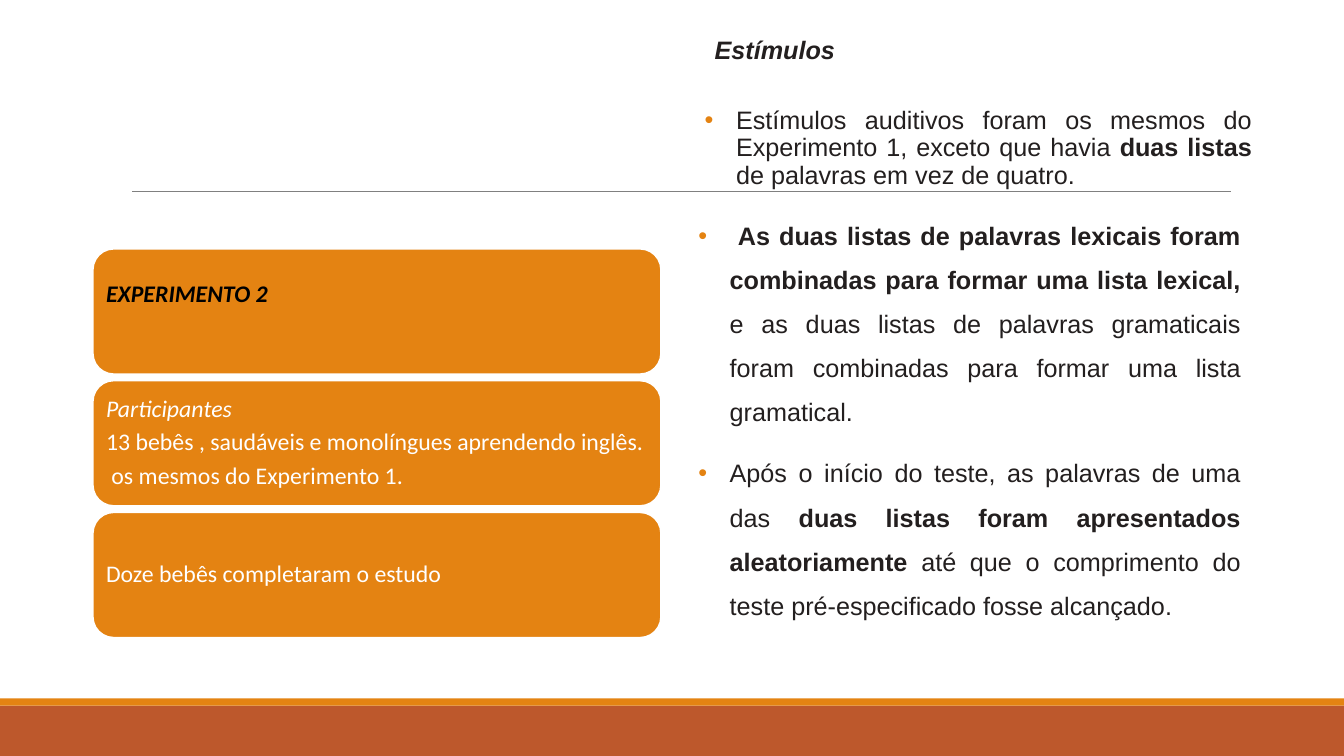
from pptx import Presentation
from pptx.dml.color import RGBColor
from pptx.enum.shapes import MSO_CONNECTOR, MSO_SHAPE
from pptx.enum.text import MSO_ANCHOR, PP_ALIGN
from pptx.oxml.xmlchemy import OxmlElement
from pptx.util import Cm, Pt

HUES = {
    "rust": "BD582C",
    "amber": "E48312",
    "gray": "808080",
    "white": "FFFFFF",
    "black": "000000",
    "ink": "231F1F",
}

CARDS = [
    ([("EXPERIMENTO 2", True, True)], "black", 1.04),
    ([("Participantes", False, True),
      ("13 bebês , saudáveis e monolíngues aprendendo inglês.", False, False),
      (" os mesmos do Experimento 1.", False, False)], "white", 0.18),
    ([("Doze bebês completaram o estudo", False, False)], "white", 0.18),
]

POINTS = [
    ([("Estímulos auditivos foram os mesmos do Experimento 1, exceto que havia ", False),
      ("duas listas ", True),
      ("de palavras em vez de quatro.", False)], 1.4, 0, 0.9, 31),
    ([(" As duas listas de palavras lexicais foram combinadas para formar "
       "uma lista lexical,", True),
      (" e as duas listas de palavras gramaticais foram combinadas para "
       "formar uma lista gramatical.", False)], 1.24, 0.28, 1.46, 12),
    ([("Após o início do teste, as palavras de uma das ", False),
      ("duas listas foram apresentados aleatoriamente", True),
      (" até que o comprimento do teste pré-especificado fosse alcançado.", False)],
     1.24, 0.28, 1.46, 12),
]


def tint(hue):
    return RGBColor.from_string(HUES[hue])


def add_run(para, text, font, size, hue, bold=False, slant=False):
    run = para.add_run()
    run.text = text
    run.font.name = font
    run.font.size = Pt(size)
    run.font.bold = bold
    run.font.italic = slant
    run.font.color.rgb = tint(hue)


def add_block(slide, kind, left, top, width, height, hue):
    block = slide.shapes.add_shape(kind, Cm(left), Cm(top), Cm(width), Cm(height))
    block.shadow.inherit = False
    block.fill.solid()
    block.fill.fore_color.rgb = tint(hue)
    block.line.fill.background()
    return block


def add_rule(slide, left, right, top):
    rule = slide.shapes.add_connector(
        MSO_CONNECTOR.STRAIGHT, Cm(left), Cm(top), Cm(right), Cm(top))
    rule.line.color.rgb = tint("gray")
    rule.line.width = Pt(0.5)
    rule._element.spPr.append(OxmlElement("a:effectLst"))


def set_frame(frame, left, top, right, bottom, anchor):
    frame.word_wrap = True
    frame.vertical_anchor = anchor
    frame.margin_left, frame.margin_top = Cm(left), Cm(top)
    frame.margin_right, frame.margin_bottom = Cm(right), Cm(bottom)


def next_para(frame, first):
    return frame.paragraphs[0] if first else frame.add_paragraph()


def add_card(slide, top, lines, hue, bottom):
    card = add_block(slide, MSO_SHAPE.ROUNDED_RECTANGLE, 2.34, top, 14.32, 3.16, "amber")
    card.line.color.rgb = tint("white")
    card.line.width = Pt(1.25)
    frame = card.text_frame
    set_frame(frame, 0.18, 0.18, 0.18, bottom, MSO_ANCHOR.MIDDLE)
    for row, (text, bold, slant) in enumerate(lines):
        para = next_para(frame, row == 0)
        para.alignment = PP_ALIGN.LEFT
        para.line_spacing = 0.9
        if row < len(lines) - 1:
            para.space_after = Pt(5.8)
        add_run(para, text, "Calibri", 17, hue, bold, slant)


def set_para(para, left, right, lines, gap):
    para.alignment = PP_ALIGN.JUSTIFY
    para.line_spacing = lines
    para.space_before = Pt(gap)
    props = para._p.get_or_add_pPr()
    props.set("marL", str(Cm(left)))
    props.set("marR", str(Cm(right)))


def add_dot(para, hang):
    props = para._p.get_or_add_pPr()
    props.set("indent", str(-Cm(hang)))
    shade = OxmlElement("a:buClr")
    value = OxmlElement("a:srgbClr")
    value.set("val", HUES["amber"])
    shade.append(value)
    face = OxmlElement("a:buFont")
    face.set("typeface", "Arial")
    mark = OxmlElement("a:buChar")
    mark.set("char", "•")
    props.extend([shade, face, mark])


def add_body(slide):
    frame = slide.shapes.add_textbox(Cm(17.15), Cm(0.81), Cm(14.4), Cm(16.36)).text_frame
    set_frame(frame, 0, 0.13, 0, 0.13, MSO_ANCHOR.TOP)
    head = next_para(frame, True)
    set_para(head, 0.86, 0, 0.9, 5.2)
    add_run(head, "Estímulos", "Arial", 18, "ink", True, True)
    for parts, left, right, lines, gap in POINTS:
        para = next_para(frame, False)
        set_para(para, left, right, lines, gap)
        add_dot(para, 0.79)
        for text, bold in parts:
            add_run(para, text, "Arial", 18, "ink", bold)


def main():
    deck = Presentation()
    deck.slide_width, deck.slide_height = Cm(33.87), Cm(19.05)
    slide = deck.slides.add_slide(deck.slide_layouts[6])
    add_block(slide, MSO_SHAPE.RECTANGLE, 0, 17.78, 33.87, 1.27, "rust")
    add_block(slide, MSO_SHAPE.RECTANGLE, 0, 17.6, 33.87, 0.18, "amber")
    add_rule(slide, 3.33, 31.01, 4.82)
    for row, (lines, hue, bottom) in enumerate(CARDS):
        add_card(slide, 6.27 + row * 3.32, lines, hue, bottom)
    add_body(slide)
    deck.save("out.pptx")


if __name__ == "__main__":
    main()
